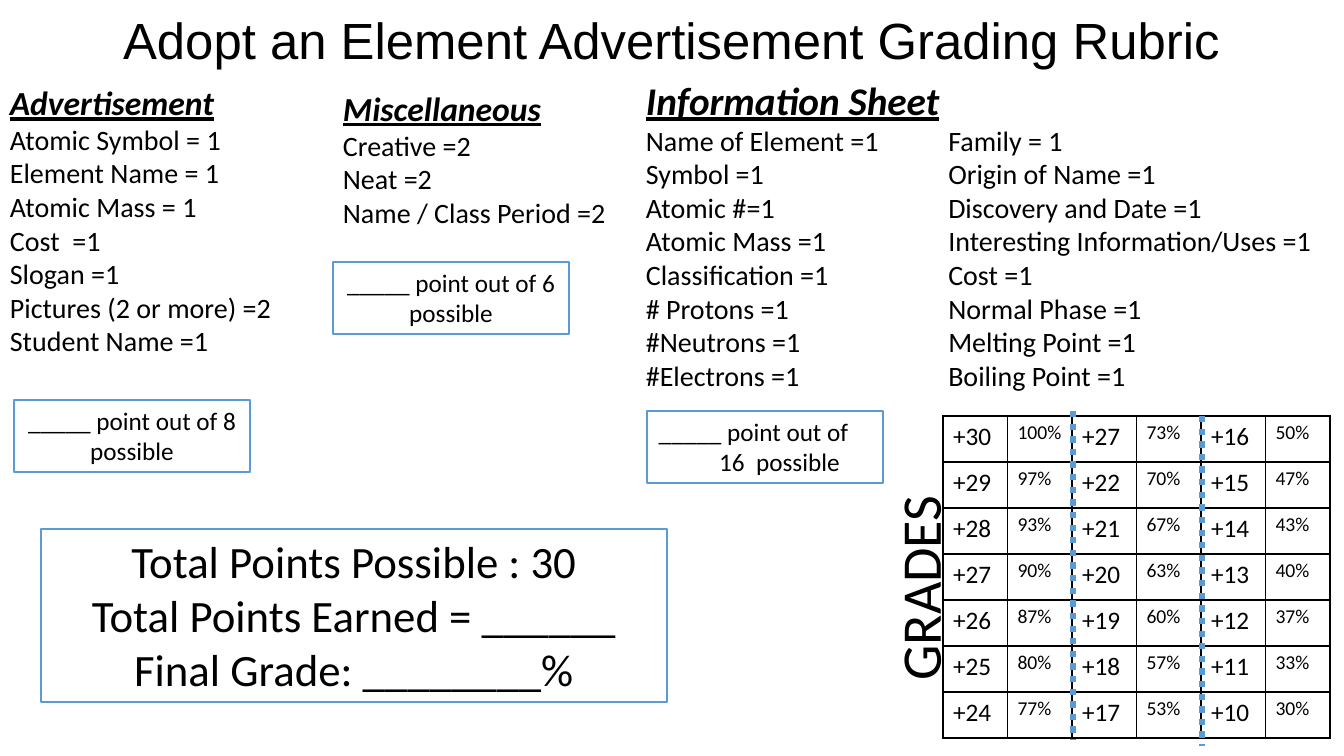
import pptx
import pptx.dml.color
import pptx.enum.dml
import pptx.enum.shapes
import pptx.enum.text
import pptx.oxml.ns
import pptx.util
from lxml import etree

PX = 914400 / 100.8  # EMU in one px
BLACK = pptx.dml.color.RGBColor(0x00, 0x00, 0x00)
WHITE = pptx.dml.color.RGBColor(0xFF, 0xFF, 0xFF)
BLUE = pptx.dml.color.RGBColor(0x5B, 0x9B, 0xD5)
ALIGN = pptx.enum.text.PP_ALIGN
ANCHOR = pptx.enum.text.MSO_ANCHOR
qn = pptx.oxml.ns.qn

ADVERTISEMENT = ["Atomic Symbol = 1", "Element Name = 1", "Atomic Mass = 1", "Cost  =1",
                 "Slogan =1", "Pictures (2 or more) =2", "Student Name =1"]
MISCELLANEOUS = ["Creative =2", "Neat =2", "Name / Class Period =2"]
INFORMATION = ["Name of Element =1\tFamily = 1",
               "Symbol =1\t\tOrigin of Name =1",
               "Atomic #\t=1\t\tDiscovery and Date =1",
               "Atomic Mass =1\t\tInteresting Information/Uses =1",
               "Classification =1\t\tCost =1",
               "# Protons =1\t\tNormal Phase =1",
               "#Neutrons =1\t\tMelting Point =1",
               "#Electrons =1\t\tBoiling Point =1"]
GRADES = ["+30 100% +27 73% +16 50%",
          "+29 97% +22 70% +15 47%",
          "+28 93% +21 67% +14 43%",
          "+27 90% +20 63% +13 40%",
          "+26 87% +19 60% +12 37%",
          "+25 80% +18 57% +11 33%",
          "+24 77% +17 53% +10 30%"]


def px(*lengths):
    return [pptx.util.Emu(round(length * PX)) for length in lengths]


def write(para, text, size, font="Calibri", align=None, heading=False,
          spacing=None, left=0, right=0, tabs=()):
    """Fill one paragraph; left and right are indents and tabs are stops, in px."""
    span = para.add_run()
    span.text = text
    span.font.name = font
    span.font.size = pptx.util.Pt(size)
    span.font.color.rgb = BLACK
    if heading:
        span.font.bold = span.font.italic = span.font.underline = True
    if align is not None:
        para.alignment = align
    if spacing:
        para.line_spacing = spacing
    properties = para._p.get_or_add_pPr()
    for name, indent in (("marL", left), ("marR", right)):
        if indent:
            properties.set(name, str(px(indent)[0]))
    if tabs:
        stops = etree.SubElement(properties, qn("a:tabLst"))
        for stop in px(*tabs):
            etree.SubElement(stops, qn("a:tab"), pos=str(stop), algn="l")


def next_para(frame, index):
    return frame.add_paragraph() if index else frame.paragraphs[0]


def prepare_frame(shape):
    frame = shape.text_frame
    frame.word_wrap = True
    frame.auto_size = pptx.enum.text.MSO_AUTO_SIZE.SHAPE_TO_FIT_TEXT
    frame.vertical_anchor = ANCHOR.TOP
    return frame


def add_title(page, text):
    title = page.shapes.title
    title.left, title.top, title.width, title.height = px(0, 14, 1344, 61)
    title.text_frame.vertical_anchor = ANCHOR.MIDDLE
    title.text_frame.auto_size = pptx.enum.text.MSO_AUTO_SIZE.NONE
    write(title.text_frame.paragraphs[0], text, 36.3, font="Arial",
          align=ALIGN.CENTER, spacing=0.8)


def add_criteria(page, place, heading, lines, heading_size=24, tabs=()):
    frame = prepare_frame(page.shapes.add_textbox(*px(*place)))
    write(frame.paragraphs[0], heading, heading_size, heading=True)
    for line in lines:
        write(frame.add_paragraph(), line, 20, tabs=tabs)


def add_score_box(page, place, lines, size=18):
    """Each line is its text and a dict of indents."""
    box = page.shapes.add_shape(pptx.enum.shapes.MSO_SHAPE.RECTANGLE, *px(*place))
    box.shadow.inherit = False
    box.fill.solid()
    box.fill.fore_color.rgb = WHITE
    box.line.color.rgb = BLUE
    box.line.width = pptx.util.Pt(1)
    frame = prepare_frame(box)
    for index, (text, indents) in enumerate(lines):
        write(next_para(frame, index), text, size, align=ALIGN.CENTER, **indents)


def add_cell_borders(cell):
    properties = cell._tc.get_or_add_tcPr()
    for index, side in enumerate(("a:lnL", "a:lnR", "a:lnT", "a:lnB")):
        border = etree.Element(qn(side), w=str(pptx.util.Pt(1)))
        fill = etree.SubElement(border, qn("a:solidFill"))
        etree.SubElement(fill, qn("a:srgbClr"), val=str(BLACK))
        properties.insert(index, border)


def add_grade_table(page, left, top, width, row_height):
    rows = [row.split() for row in GRADES]
    columns = len(rows[0])
    table = page.shapes.add_table(
        len(rows), columns, *px(left, top, width, row_height * len(rows))).table
    table.first_row = table.horz_banding = False
    for column in table.columns:
        column.width = px(width / columns)[0]
    for row, values in zip(table.rows, rows):
        row.height = px(row_height)[0]
        for cell, value in zip(row.cells, values):
            cell.fill.background()
            write(cell.text_frame.paragraphs[0], value, 14 if "%" in value else 18)
            add_cell_borders(cell)


def add_dotted_line(page, x, top, bottom):
    line = page.shapes.add_connector(
        pptx.enum.shapes.MSO_CONNECTOR.STRAIGHT, *px(x, top, x, bottom))
    line.line.color.rgb = BLUE
    line.line.width = pptx.util.Pt(4.5)
    line.line.dash_style = pptx.enum.dml.MSO_LINE.ROUND_DOT
    etree.SubElement(line._element.spPr, qn("a:effectLst"))


def add_side_label(page, place, text):
    label = page.shapes.add_textbox(*px(*place))
    label.rotation = 270
    write(prepare_frame(label).paragraphs[0], text, 40, align=ALIGN.CENTER)


def main():
    deck = pptx.Presentation()
    deck.slide_width, deck.slide_height = px(1344, 756)
    page = deck.slides.add_slide(deck.slide_layouts[5])
    add_title(page, "Adopt an Element Advertisement Grading Rubric")

    # Criteria lists, with tab stops one inch apart
    add_criteria(page, (0, 77, 339, 288), "Advertisement", ADVERTISEMENT)
    add_criteria(page, (636, 71, 694, 329), "Information Sheet", INFORMATION,
                 heading_size=28, tabs=(100.8, 201.6, 302.4))
    add_criteria(page, (333, 83, 669, 152), "Miscellaneous", MISCELLANEOUS)

    # Scores
    add_score_box(page, (14, 400, 236, 72), [("_____ point out of 8 possible", {})])
    add_score_box(page, (333, 262, 236, 72), [("_____ point out of 6 possible", {})])
    add_score_box(page, (647, 411, 236, 72), [("_____ point out of", {"right": 23}),
                                              ("16  possible", {"left": 52})])
    add_score_box(page, (41, 529, 626, 173), [("Total Points Possible : 30", {}),
                                              ("Total Points Earned = ______", {}),
                                              ("Final Grade: ________%", {})], size=32)

    # Grade scale
    add_grade_table(page, 943, 416, 387, 46)
    add_dotted_line(page, 1073, 411, 740)
    add_dotted_line(page, 1202, 416, 746)
    add_side_label(page, (783, 549, 272, 78), "GRADES")

    deck.save("out.pptx")


if __name__ == "__main__":
    main()
